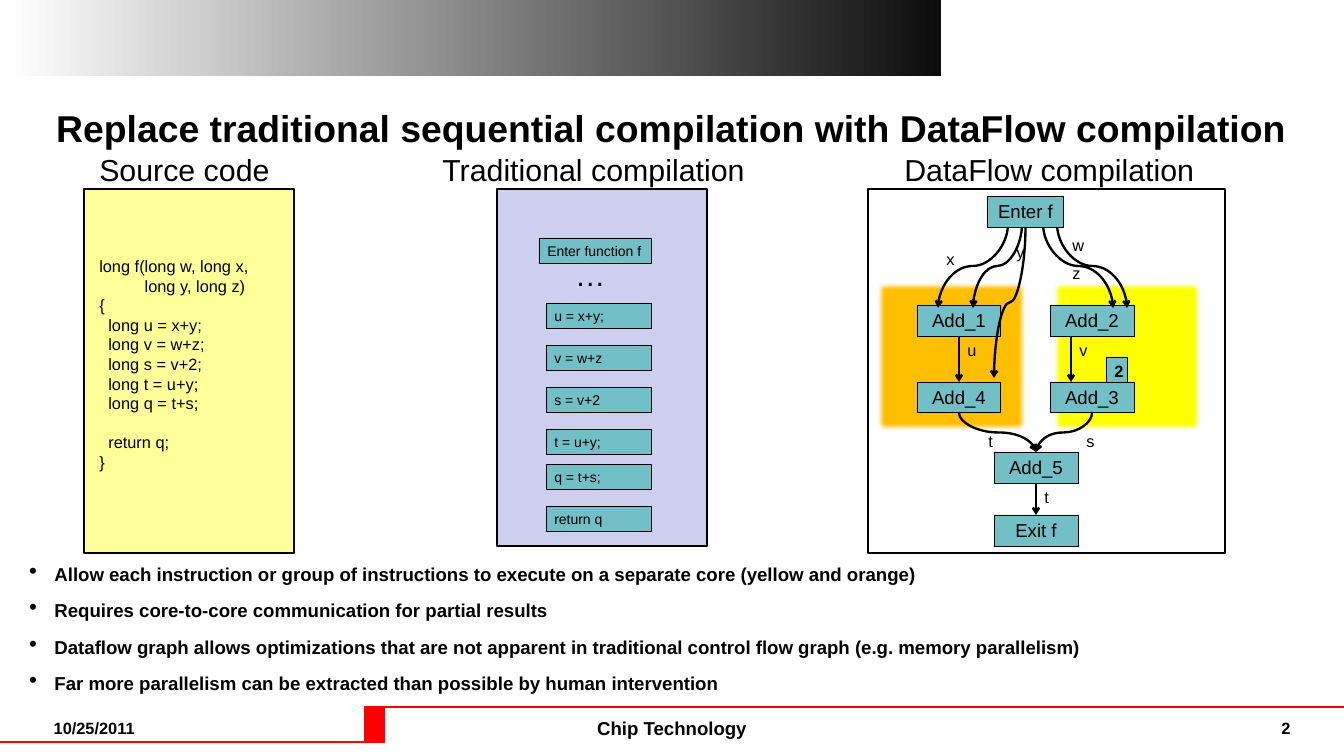
import lxml.etree
import pptx
import pptx.dml.color
import pptx.enum.shapes
import pptx.enum.text
import pptx.oxml.ns
import pptx.util

Pt = pptx.util.Pt
RGBColor = pptx.dml.color.RGBColor
ALIGN = pptx.enum.text.PP_ALIGN
ANCHOR = pptx.enum.text.MSO_ANCHOR
CONNECTOR = pptx.enum.shapes.MSO_CONNECTOR
RECTANGLE = pptx.enum.shapes.MSO_SHAPE.RECTANGLE
qn = pptx.oxml.ns.qn

BLACK = RGBColor(0x00, 0x00, 0x00)
WHITE = RGBColor(0xFF, 0xFF, 0xFF)
CHARCOAL = RGBColor(0x0D, 0x0D, 0x0D)
RED = RGBColor(0xFF, 0x00, 0x00)
YELLOW = RGBColor(0xFF, 0xFF, 0x00)
ORANGE = RGBColor(0xFF, 0xC0, 0x00)
PALE_YELLOW = RGBColor(0xFF, 0xFF, 0x99)
LAVENDER = RGBColor(0xCE, 0xCE, 0xEF)
TEAL = RGBColor(0x72, 0xBF, 0xC5)

NODE_HEIGHT = 26.6
STEP_HEIGHT = 21.6
SOURCE_CODE = [
    "long f(long w, long x,",
    "          long y, long z)",
    "{",
    "  long u = x+y;",
    "  long v = w+z;",
    "  long s = v+2;",
    "  long t = u+y;",
    "  long q = t+s;",
    "  return q;",
    "}",
]
STEPS = [("u = x+y;", 260), ("v = w+z", 296), ("s = v+2", 332),
         ("t = u+y;", 368), ("q = t+s;", 398), ("return q", 434)]
ADD_NODES = [("Add_1", 786, 288), ("Add_2", 900, 288), ("Add_4", 786, 354),
             ("Add_3", 900, 354), ("Add_5", 852, 414), ("Exit f", 852, 468)]
CURVES = [(894, 192, 954, 264), (906, 192, 966, 264), (864, 192, 804, 264),
          (876, 192, 834, 264), (879, 194.4, 852, 324),
          (822, 354, 888, 387.4), (936, 354, 888, 387.4)]
STRAIGHT_ARROWS = [(822, 288, 822, 327.4), (918, 288, 918, 327.4),
                   (888, 414, 888, 441.4)]
VALUE_LABELS = [("z", 912, 222), ("w", 912, 198), ("x", 804, 210),
                ("y", 864, 204), ("u", 822, 288), ("v", 918, 288),
                ("t", 840, 366), ("s", 924, 366), ("t", 888, 414)]
BULLETS = [
    "Allow each instruction or group of instructions to execute on a separate core (yellow and orange)",
    "Requires core-to-core communication for partial results",
    "Dataflow graph allows optimizations that are not apparent in traditional control flow graph (e.g. memory parallelism)",
    "Far more parallelism can be extracted than possible by human intervention",
]


def add_bullet(paragraph):
    """Give a paragraph a hanging bullet."""
    properties = paragraph._p.get_or_add_pPr()
    properties.set("marL", str(Pt(21.6)))
    properties.set("indent", str(-Pt(21.6)))
    lxml.etree.SubElement(properties, qn("a:buSzPct"), val="125000")
    lxml.etree.SubElement(properties, qn("a:buChar"), char="•")


def write_text(shape, lines, size=14, bold=False, align=ALIGN.LEFT, anchor=ANCHOR.TOP,
               margins=(7.2, 3.6, 7.2, 3.6), space_before=0, bullet=False):
    """Write lines as formatted paragraphs and return the paragraphs."""
    frame = shape.text_frame
    frame.word_wrap = True
    frame.vertical_anchor = anchor
    (frame.margin_left, frame.margin_top,
     frame.margin_right, frame.margin_bottom) = map(Pt, margins)
    frame.text = "\n".join([lines] if isinstance(lines, str) else lines)
    for index, paragraph in enumerate(frame.paragraphs):
        if bullet:
            add_bullet(paragraph)
        paragraph.alignment = align
        if index and space_before:
            paragraph.space_before = Pt(space_before)
        paragraph.font.name = "Arial"
        paragraph.font.size = Pt(size)
        paragraph.font.bold = bold
        paragraph.font.color.rgb = BLACK
    return frame.paragraphs


def add_text(slide, lines, bounds, **text_format):
    """Add a text box and return its paragraphs."""
    return write_text(slide.shapes.add_textbox(*map(Pt, bounds)), lines, **text_format)


def add_box(slide, bounds, fill=None, line_width=0):
    """Add a rectangle with an optional fill and black outline."""
    shape = slide.shapes.add_shape(RECTANGLE, *map(Pt, bounds))
    shape.shadow.inherit = False
    if fill is None:
        shape.fill.background()
    else:
        shape.fill.solid()
        shape.fill.fore_color.rgb = fill
    if line_width:
        shape.line.color.rgb = BLACK
        shape.line.width = Pt(line_width)
    else:
        shape.line.fill.background()
    return shape


def add_node(slide, text, bounds, **text_format):
    """Add a teal box with text."""
    write_text(add_box(slide, bounds, TEAL, 0.75), text, **text_format)


def add_core(slide, left, color):
    """Add a soft-edged square that marks one core."""
    core = add_box(slide, (left, 240, 132, 132), color)
    effects = core._element.spPr.find(qn("a:effectLst"))
    lxml.etree.SubElement(effects, qn("a:softEdge"), rad=str(Pt(5)))


def add_line(slide, points, color=BLACK, width=2, arrow=False, kind=CONNECTOR.STRAIGHT):
    """Add a connector between two points."""
    connector = slide.shapes.add_connector(kind, *map(Pt, points))
    connector.line.color.rgb = color
    connector.line.width = Pt(width)
    properties = connector._element.spPr
    if arrow:
        lxml.etree.SubElement(properties.find(qn("a:ln")), qn("a:tailEnd"), type="arrow")
    lxml.etree.SubElement(properties, qn("a:effectLst"))
    return connector


def add_curve(slide, start_x, start_y, end_x, end_y):
    """Add a curved arrow that leaves and arrives vertically."""
    center_x, center_y = (start_x + end_x) / 2, (start_y + end_y) / 2
    half_width, half_height = (end_y - start_y) / 2, abs(end_x - start_x) / 2
    direction = 1 if end_x < start_x else -1
    points = (center_x - direction * half_width, center_y - half_height,
              center_x + direction * half_width, center_y + half_height)
    connector = add_line(slide, points, arrow=True, kind=CONNECTOR.CURVE)
    rotation = 90 if direction == 1 else 270
    connector._element.spPr.find(qn("a:xfrm")).set("rot", str(rotation * 60000))


def add_frame(slide):
    """Add the top gradient, the footer rule and the footer texts."""
    add_box(slide, (312, 606, 18, 30), RED)
    add_line(slide, (0, 636, 330, 636), RED, 2.25)
    add_line(slide, (312, 606, 1152, 606), RED, 2.25)
    banner = add_box(slide, (6, 0, 800.5, 65.5))
    banner.fill.gradient()
    banner.fill.gradient_angle = 0
    for stop, color in zip(banner.fill.gradient_stops, (WHITE, CHARCOAL)):
        stop.color.rgb = color
    for text, left, width, size, align in (("10/25/2011", 36, 173, 14, ALIGN.LEFT),
                                           ("Chip Technology", 342, 468, 16, ALIGN.CENTER),
                                           ("2", 1062, 54, 14, ALIGN.RIGHT)):
        add_text(slide, text, (left, 612, width, 24), size=size, bold=True, align=align,
                 anchor=ANCHOR.MIDDLE, margins=(10, 5, 10, 5))


def add_source(slide):
    """Add the source code panel."""
    add_box(slide, (72, 162, 180, 312), PALE_YELLOW, 2)
    code = add_text(slide, SOURCE_CODE, (78, 216, 168, 194))
    code[-2].space_before = Pt(16.8)


def add_sequence(slide):
    """Add the traditional compilation panel."""
    add_box(slide, (426, 162, 180, 306), LAVENDER, 2)
    add_node(slide, "Enter function f", (462, 204, 96, STEP_HEIGHT), size=12)
    add_text(slide, "…", (486, 216, 42, 39), size=26)
    for text, top in STEPS:
        add_node(slide, text, (468, top, 90, STEP_HEIGHT), size=12)


def add_dataflow(slide):
    """Add the dataflow graph panel."""
    add_core(slide, 900, YELLOW)
    add_core(slide, 750, ORANGE)
    add_box(slide, (744, 162, 306, 312), line_width=2)
    add_node(slide, "2", (948, 306, 18, 24.5), bold=True)
    for text, left, bottom in ADD_NODES:
        add_node(slide, text, (left, bottom - NODE_HEIGHT, 72, NODE_HEIGHT),
                 size=16, align=ALIGN.CENTER)
    for points in CURVES:
        add_curve(slide, *points)
    for points in STRAIGHT_ARROWS:
        add_line(slide, points, arrow=True)
    add_node(slide, "Enter f", (846, 168, 66, NODE_HEIGHT), size=16, align=ALIGN.CENTER)
    for text, left, top in VALUE_LABELS:
        add_text(slide, text, (left, top, 18, 24.5))


def main():
    """Build and save the slide."""
    presentation = pptx.Presentation()
    presentation.slide_width, presentation.slide_height = Pt(1152), Pt(648)
    slide = presentation.slides.add_slide(presentation.slide_layouts[6])
    add_frame(slide)
    add_text(slide, "Replace traditional sequential compilation with DataFlow compilation",
             (36, 90, 1080, 38), size=32, bold=True, align=ALIGN.CENTER, anchor=ANCHOR.MIDDLE)
    for text, left in (("Source code", 78), ("Traditional compilation", 372),
                       ("DataFlow compilation", 768)):
        add_text(slide, text, (left, 126, 276, 39), size=26)
    add_source(slide)
    add_sequence(slide)
    add_dataflow(slide)
    add_text(slide, BULLETS, (18, 468, 1080, 138), size=16, bold=True,
             margins=(7.2, 14.4, 7.2, 3.6), space_before=12, bullet=True)
    presentation.save("out.pptx")


if __name__ == "__main__":
    main()
